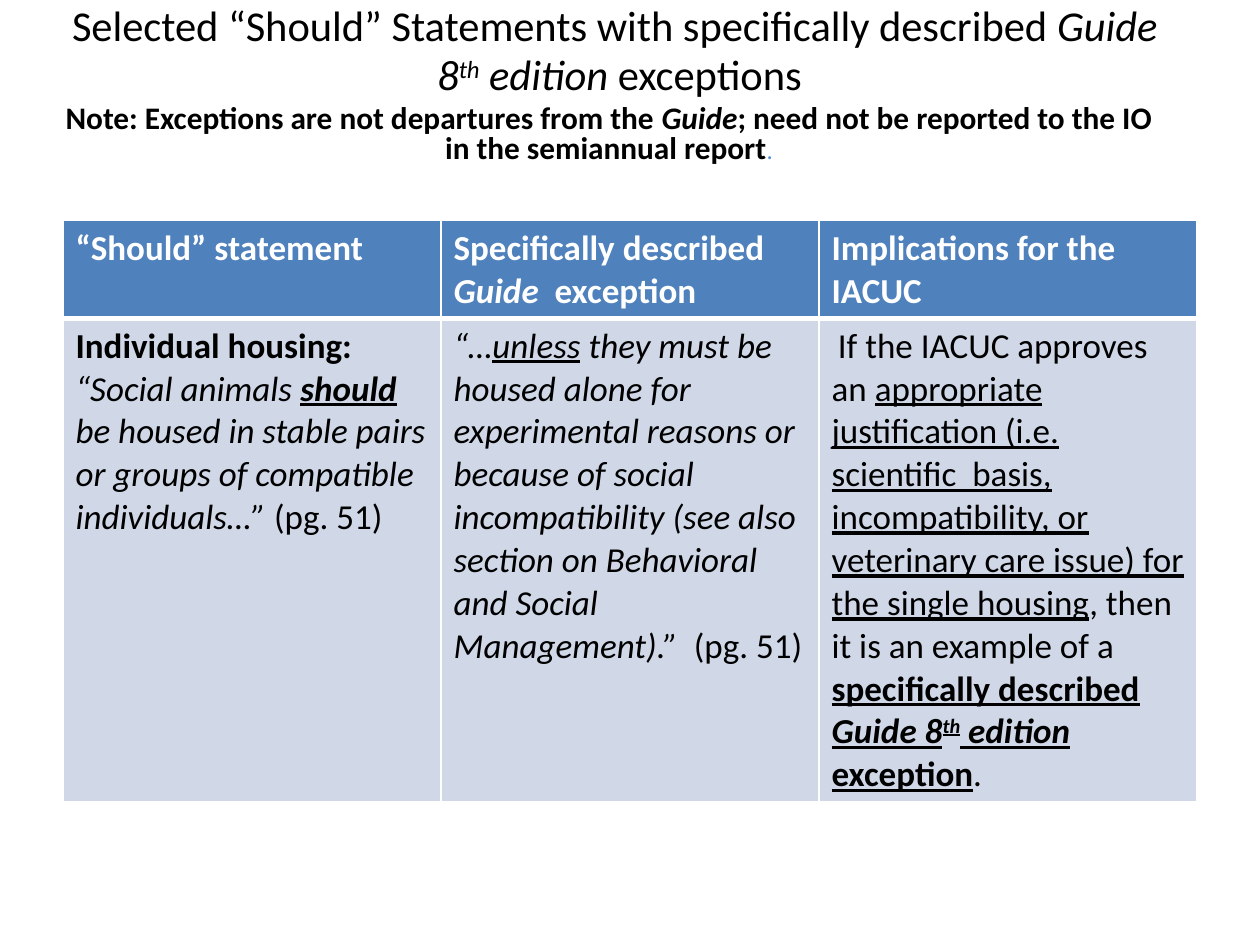
from lxml import etree
from pptx import Presentation
from pptx import util as u
from pptx.dml.color import RGBColor
from pptx.enum import text
from pptx.oxml.ns import qn

BLACK = RGBColor(0, 0, 0)
WHITE = RGBColor(0xFF, 0xFF, 0xFF)
HEADER_BLUE = RGBColor(0x4F, 0x81, 0xBD)
BODY_BLUE = RGBColor(0xD0, 0xD8, 0xE8)
STOP_BLUE = RGBColor(0x55, 0x8E, 0xD5)

TITLE = [
    ("Selected “Should” Statements with specifically described ", ""),
    ("Guide ", "i"), ("\n", ""), ("8", "i"), ("th", "i^"), (" edition ", "i"),
    ("exceptions", ""),
]
NOTE = [
    ("Note: Exceptions are not departures from the ", "b"), ("Guide", "bi"),
    ("; need not be reported to the IO in the semiannual report", "b"),
]
HEADERS = [
    [[("“Should” statement", "b")]],
    [[("Specifically described ", "b"), ("Guide  ", "bi"), ("exception", "b")]],
    [[("Implications for the IACUC", "b")]],
]
BODY = [
    [
        [("Individual housing:", "b")],
        [("“Social animals ", "i"), ("should", "biu"),
         (" be housed in stable pairs or groups of compatible individuals…” ", "i"),
         ("(pg. 51)", "")],
    ],
    [[
        ("“…", "i"), ("unless", "iu"), (" ", "bi"),
        ("they must be housed alone for experimental reasons or because of social "
         "incompatibility (see also section on Behavioral and Social Management).”", "i"),
        ("\u00a0 (pg. 51)", ""),
    ]],
    [[
        (" ", "", 16), ("If the IACUC approves an ", ""), ("appropriate", "u"), (" ", ""),
        ("justification (i.e. scientific  basis, incompatibility, or veterinary care "
         "issue) for the single housing", "u"),
        (", then it is an example of a", ""), (" specifically described ", "bu"),
        ("Guide 8", "biu"), ("th", "biu^"), (" edition", "biu"), (" exception", "bu"),
        (".", ""),
    ]],
]


def add_spans(para, spans, size, colour):
    """Add runs whose style letters mean bold, italic, underline and superscript."""
    for words, style, *own_size in spans:
        if words == "\n":
            para.add_line_break()
            continue
        span = para.add_run()
        span.text = words
        font = span.font
        font.name = "Calibri"
        font.size = u.Pt(own_size[0] if own_size else size)
        font.color.rgb = colour
        font.bold = "b" in style
        font.italic = "i" in style
        font.underline = "u" in style
        if "^" in style:
            font._element.set("baseline", "30000")


def add_heading(page, width, top_inset, spans, size, line_spacing):
    """Add a centred text block at the head of the page and return its paragraph."""
    box = page.shapes.add_textbox(u.Pt(24), u.Pt(0), u.Pt(width), u.Pt(111.6))
    frame = box.text_frame
    frame.word_wrap = True
    frame.vertical_anchor = text.MSO_ANCHOR.TOP
    frame.margin_top = u.Pt(top_inset)
    para = frame.paragraphs[0]
    para.alignment = text.PP_ALIGN.CENTER
    para.line_spacing = line_spacing
    add_spans(para, spans, size, BLACK)
    return para


def set_borders(cell, bottom=1, top=1):
    """Draw white borders round a cell."""
    properties = cell._tc.get_or_add_tcPr()
    widths = {"lnL": 1, "lnR": 1, "lnT": top, "lnB": bottom}
    for place, (side, width) in enumerate(widths.items()):
        line = etree.Element(qn(f"a:{side}"), w=str(u.Pt(width)))
        fill = etree.SubElement(line, qn("a:solidFill"))
        etree.SubElement(fill, qn("a:srgbClr"), val=str(WHITE))
        properties.insert(place, line)


def fill_cell(cell, paragraphs, fill, colour):
    """Set the fill and the text of a cell."""
    cell.fill.solid()
    cell.fill.fore_color.rgb = fill
    frame = cell.text_frame
    for index, spans in enumerate(paragraphs):
        para = frame.add_paragraph() if index else frame.paragraphs[0]
        add_spans(para, spans, 20, colour)


def add_statement_table(page):
    """Add the table of statements, exceptions and implications."""
    frame = page.shapes.add_table(2, 3, u.Pt(36), u.Pt(126), u.Pt(648), u.Pt(332))
    table = frame.table
    for row, height in zip(table.rows, (56, 276)):
        row.height = u.Pt(height)
    for column, (header, body) in enumerate(zip(HEADERS, BODY)):
        header_cell, body_cell = table.cell(0, column), table.cell(1, column)
        fill_cell(header_cell, header, HEADER_BLUE, WHITE)
        set_borders(header_cell, bottom=3)
        fill_cell(body_cell, body, BODY_BLUE, BLACK)
        set_borders(body_cell, top=3)


def main():
    """Build the slide and save it."""
    deck = Presentation()
    deck.slide_width, deck.slide_height = u.Pt(720), u.Pt(540)
    page = deck.slides.add_slide(deck.slide_layouts[6])
    add_heading(page, 660, 1, TITLE, 24.3, 0.97)
    add_statement_table(page)
    note = add_heading(page, 648, 60, NOTE, 17.9, 0.8)
    add_spans(note, [(".", "")], 14.2, STOP_BLUE)
    deck.save("out.pptx")


if __name__ == "__main__":
    main()
